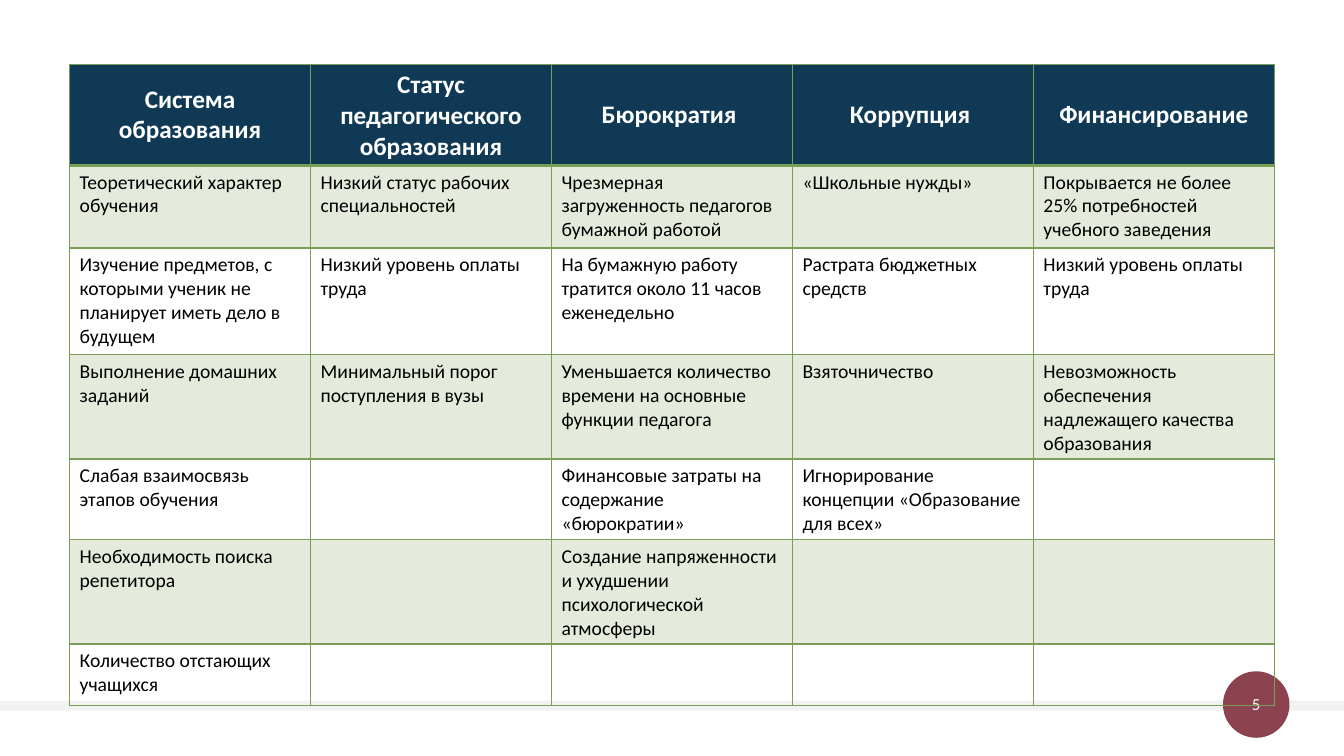
from dataclasses import dataclass
from pptx import Presentation
from pptx.dml.color import RGBColor
from pptx.enum.shapes import MSO_SHAPE
from pptx.enum.text import MSO_ANCHOR, PP_ALIGN
from pptx.oxml.ns import qn
from pptx.util import Inches, Pt
from lxml.etree import SubElement


@dataclass(frozen=True)
class Theme:
    font: str = "Calibri"
    navy: str = "0F3955"
    green: str = "7A9E56"
    wine: str = "8A434F"
    grey: str = "F2F2F2"
    white: str = "FFFFFF"
    black: str = "000000"
    head_size: int = 18
    body_size: int = 14
    number_size: int = 12
    band_alpha: int = 20


@dataclass(frozen=True)
class Decoration:
    kind: MSO_SHAPE
    left: float
    top: float
    width: float
    height: float
    color: str


@dataclass(frozen=True)
class Row:
    height: float
    texts: tuple[str, ...]


THEME = Theme()

DECORATIONS = (
    Decoration(MSO_SHAPE.RECTANGLE, 0, 6.95, 13.33, 0.1, THEME.grey),
    Decoration(MSO_SHAPE.OVAL, 12.13, 6.66, 0.66, 0.66, THEME.wine),
)

ROWS = (
    Row(0.97, ("Система образования", "Статус педагогического образования",
               "Бюрократия ", "Коррупция ", "Финансирование")),
    Row(0.82, ("Теоретический характер обучения",
               "Низкий статус рабочих специальностей",
               "Чрезмерная загруженность педагогов бумажной работой",
               "«Школьные нужды»",
               "Покрывается не более 25% потребностей учебного заведения")),
    Row(1.06, ("Изучение предметов, с которыми ученик не планирует иметь дело в будущем",
               "Низкий уровень оплаты труда",
               "На бумажную работу тратится около 11 часов еженедельно",
               "Растрата бюджетных средств",
               "Низкий уровень оплаты труда")),
    Row(1, ("Выполнение домашних заданий",
            "Минимальный порог поступления в вузы",
            "Уменьшается количество времени на основные функции педагога",
            "Взяточничество",
            "Невозможность обеспечения надлежащего качества образования")),
    Row(0.77, ("Слабая взаимосвязь этапов обучения", "",
               "Финансовые затраты на содержание «бюрократии»",
               "Игнорирование концепции «Образование для всех»", "")),
    Row(1, ("Необходимость поиска репетитора", "",
            "Создание напряженности и ухудшении психологической атмосферы", "", "")),
    Row(0.61, ("Количество отстающих учащихся", "", "", "", "")),
)
COLUMN_WIDTH = 2.39


def add_text(p, text: str, size: int, color: str, bold: bool = False) -> None:
    r = p.add_run()
    r.text = text
    r.font.name = THEME.font
    r.font.size = Pt(size)
    r.font.bold = bold
    r.font.color.rgb = RGBColor.from_string(color)


def add_decoration(s, item: Decoration) -> None:
    sp = s.shapes.add_shape(item.kind, Inches(item.left), Inches(item.top),
                            Inches(item.width), Inches(item.height))
    sp.shadow.inherit = False
    sp.fill.solid()
    sp.fill.fore_color.rgb = RGBColor.from_string(item.color)
    sp.line.fill.background()


def add_slide_number(s, number: str) -> None:
    sp = s.shapes.add_textbox(Inches(12.13), Inches(6.77), Inches(0.66), Inches(0.43))
    tf = sp.text_frame
    tf.word_wrap = True
    tf.vertical_anchor = MSO_ANCHOR.MIDDLE
    tf.margin_left = tf.margin_top = tf.margin_right = tf.margin_bottom = 0
    p = tf.paragraphs[0]
    p.alignment = PP_ALIGN.CENTER
    add_text(p, number, THEME.number_size, THEME.white)


def set_borders(cell, top: int, bottom: int) -> None:
    tc_pr = cell._tc.get_or_add_tcPr()
    widths = {"a:lnL": 1, "a:lnR": 1, "a:lnT": top, "a:lnB": bottom}
    for tag, width in widths.items():
        ln = SubElement(tc_pr, qn(tag), w=str(Pt(width)))
        fill = SubElement(ln, qn("a:solidFill"))
        SubElement(fill, qn("a:srgbClr"), val=THEME.green)


def set_fill(cell, row_index: int) -> None:
    if row_index and row_index % 2 == 0:
        cell.fill.background()
        return
    cell.fill.solid()
    color = THEME.green if row_index else THEME.navy
    cell.fill.fore_color.rgb = RGBColor.from_string(color)
    if row_index:
        clr = cell._tc.tcPr.find(qn("a:solidFill")).find(qn("a:srgbClr"))
        SubElement(clr, qn("a:alpha"), val=str(THEME.band_alpha * 1000))


def fill_cell(cell, text: str, row_index: int) -> None:
    is_head = row_index == 0
    set_borders(cell, 2 if row_index == 1 else 1, 2 if is_head else 1)
    set_fill(cell, row_index)
    p = cell.text_frame.paragraphs[0]
    if is_head:
        cell.vertical_anchor = MSO_ANCHOR.MIDDLE
        p.alignment = PP_ALIGN.CENTER
        add_text(p, text, THEME.head_size, THEME.white, True)
    elif text:
        add_text(p, text, THEME.body_size, THEME.black)


def add_problem_table(s) -> None:
    count = len(ROWS[0].texts)
    frame = s.shapes.add_table(len(ROWS), count, Inches(0.69), Inches(0.64),
                               Inches(COLUMN_WIDTH * count),
                               Inches(sum(row.height for row in ROWS)))
    table = frame.table
    table.first_row = False
    table.horz_banding = False
    for column in table.columns:
        column.width = Inches(COLUMN_WIDTH)
    for i, row in enumerate(ROWS):
        table.rows[i].height = Inches(row.height)
        for j, text in enumerate(row.texts):
            fill_cell(table.cell(i, j), text, i)


def main() -> None:
    prs = Presentation()
    prs.slide_width = Inches(13.33)
    prs.slide_height = Inches(7.5)
    s = prs.slides.add_slide(prs.slide_layouts[6])
    s.background.fill.solid()
    s.background.fill.fore_color.rgb = RGBColor.from_string(THEME.white)
    for item in DECORATIONS:
        add_decoration(s, item)
    add_slide_number(s, "5")
    add_problem_table(s)
    prs.save("out.pptx")


if __name__ == "__main__":
    main()
